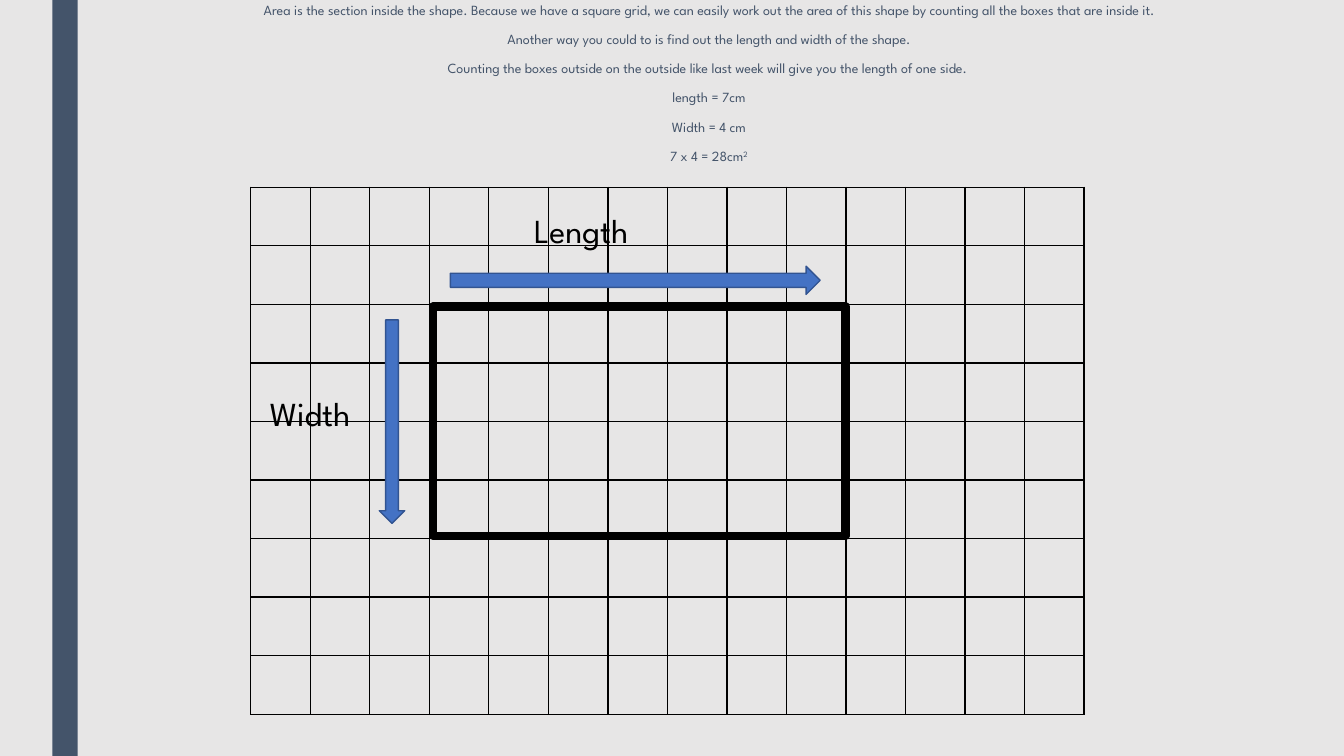
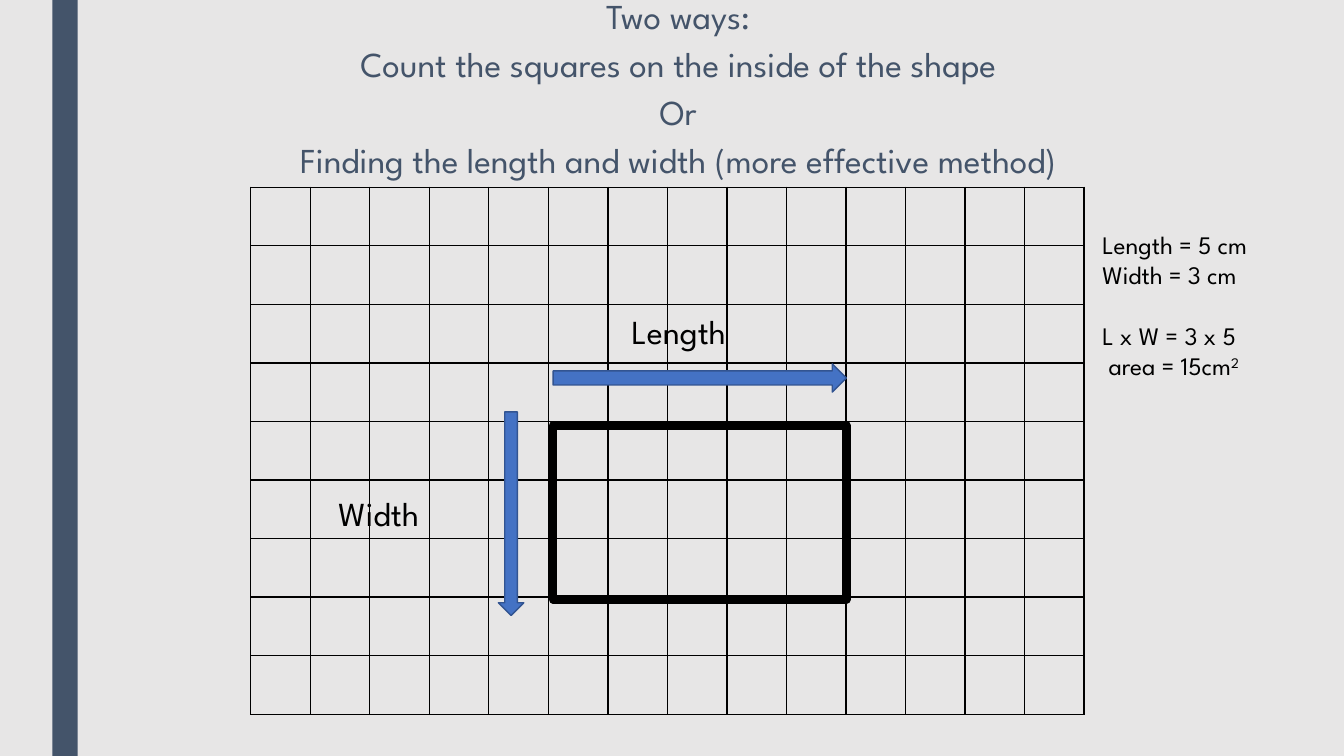
from lxml.etree import SubElement
from pptx import Presentation
from pptx.dml.color import RGBColor
from pptx.enum.shapes import MSO_SHAPE as Preset
from pptx.enum.text import MSO_AUTO_SIZE as AutoSize, MSO_ANCHOR as Anchor, PP_ALIGN as Align
from pptx.oxml.ns import qn
from pptx.util import Cm, Pt

# Shared look
FONT = "League Spartan"
PAPER, NAVY, BLACK = "E7E6E6", "44546A", "000000"
ARROW_FILL, ARROW_EDGE = "4472C4", "325491"
SLIDE_WIDTH, SLIDE_HEIGHT = 33.87, 19.05
COLUMNS, ROWS = 14, 9
GRID = (6.32, 4.72, 21, 13.28)
LABEL_SIZE = (6.63, 1.27)
ARROW_THICKNESS, DOWN_ARROW_THICKNESS, DOWN_ARROW_LENGTH = 0.71, 0.64, 5.13


def color(value):
    return RGBColor.from_string(value)


def place(*lengths):
    return [Cm(length) for length in lengths]


def write_paragraph(para, text, *, size, ink=BLACK, align=Align.LEFT,
                    spacing=None, before=0, after=0):
    """Write one paragraph; what follows a caret is superscript."""
    para.alignment = align
    para.line_spacing = spacing
    para.space_before, para.space_after = Pt(before), Pt(after)
    base, _, power = text.partition("^")
    for part in filter(None, (base, power)):
        span = para.add_run()
        span.text = part
        span.font.name, span.font.size = FONT, Pt(size)
        span.font.color.rgb = color(ink)
    if power:
        span._r.get_or_add_rPr().set("baseline", "30000")


def paragraphs(frame, count):
    return [frame.paragraphs[0]] + [frame.add_paragraph() for _ in range(count - 1)]


def add_preset(page, preset, bounds, *, fill=None, line=None, weight=1):
    shape = page.shapes.add_shape(preset, *place(*bounds))
    shape.shadow.inherit = False
    if fill:
        shape.fill.solid()
        shape.fill.fore_color.rgb = color(fill)
    else:
        shape.fill.background()
    if line:
        shape.line.color.rgb = color(line)
        shape.line.width = Pt(weight)
    else:
        shape.line.fill.background()
    return shape


def style_master(deck, page):
    """Give the master its background and its side band."""
    master = deck.slide_master
    master.background.fill.solid()
    master.background.fill.fore_color.rgb = color(PAPER)
    band = add_preset(page, Preset.RECTANGLE, (1.32, 0, 0.64, SLIDE_HEIGHT), fill=NAVY)
    band.element.xpath(".//p:cNvPr")[0].set("id", "20")
    master.shapes.element.insert(2, band.element)


def add_page(deck):
    page = deck.slides.add_slide(deck.slide_layouts[1])
    title = page.shapes.title.element
    title.getparent().remove(title)
    return page


def fill_body(page, lines, *, width, size):
    body = page.placeholders[1]
    body.left, body.top, body.width, body.height = place(4.24, 0, width, 4.72)
    frame = body.text_frame
    frame.auto_size = AutoSize.NONE
    frame.vertical_anchor = Anchor.TOP
    for para, text in zip(paragraphs(frame, len(lines)), lines):
        write_paragraph(para, text, size=size, ink=NAVY, align=Align.CENTER,
                        spacing=0.74, before=10, after=2)
        properties = para._p.get_or_add_pPr()
        properties.set("marL", "0")
        properties.set("indent", "0")
        SubElement(properties, qn("a:buNone"))


def add_text(page, bounds, lines, *, size):
    """Add a text box from pairs of text and gap above in points."""
    box = page.shapes.add_textbox(*place(*bounds))
    frame = box.text_frame
    frame.word_wrap = True
    frame.auto_size = AutoSize.SHAPE_TO_FIT_TEXT
    for para, (text, gap) in zip(paragraphs(frame, len(lines)), lines):
        write_paragraph(para, text, size=size, before=gap)


def border_cell(cell):
    properties = cell._tc.get_or_add_tcPr()
    for side in ("lnL", "lnR", "lnT", "lnB"):
        edge = SubElement(properties, qn(f"a:{side}"), w=str(Pt(1)))
        fill = SubElement(edge, qn("a:solidFill"))
        SubElement(fill, qn("a:srgbClr"), val=BLACK)


def add_grid(page):
    table = page.shapes.add_table(ROWS, COLUMNS, *place(*GRID)).table
    table.first_row = table.horz_banding = False
    for cell in table.iter_cells():
        border_cell(cell)
        cell.fill.background()


def add_measured_rectangle(page, bounds, *, length_arrow, width_arrow,
                           length_label, width_label):
    """Draw the outlined rectangle with its two arrows and labels."""
    add_preset(page, Preset.RECTANGLE, bounds, line=BLACK, weight=6)
    arrows = (
        (Preset.RIGHT_ARROW, (*length_arrow, ARROW_THICKNESS)),
        (Preset.DOWN_ARROW, (*width_arrow, DOWN_ARROW_THICKNESS, DOWN_ARROW_LENGTH)),
    )
    for preset, arrow_bounds in arrows:
        add_preset(page, preset, arrow_bounds, fill=ARROW_FILL, line=ARROW_EDGE)
    for text, corner in (("Width", width_label), ("Length", length_label)):
        add_text(page, (*corner, *LABEL_SIZE), [(text, 0)], size=24)


def build_explanation(page):
    fill_body(page, [
        "Area is the section inside the shape. Because we have a square grid, we can "
        "easily work out the area of this shape by counting all the boxes that are inside it.",
        "Another way you could to is find out the length and width of the shape.",
        "Counting the boxes outside on the outside like last week will give you "
        "the length of one side. ",
        "length = 7cm",
        "Width = 4 cm",
        "7 x 4 = 28cm^2",
    ], width=27.25, size=10)
    add_grid(page)
    add_measured_rectangle(page, (10.92, 7.72, 10.39, 5.79),
                           length_arrow=(11.35, 6.71, 9.32), width_arrow=(9.56, 8.06),
                           length_label=(13.21, 5.16), width_label=(6.55, 9.78))


def build_two_ways(page):
    fill_body(page, [
        "Two ways:",
        "Count the squares on the inside of the shape",
        "Or",
        "Finding the length and width (more effective method)",
    ], width=25.7, size=25)
    add_grid(page)
    add_measured_rectangle(page, (13.94, 10.72, 7.39, 4.39),
                           length_arrow=(13.94, 9.17, 7.39), width_arrow=(12.56, 10.38),
                           length_label=(15.67, 7.7), width_label=(8.28, 12.29))
    add_text(page, (27.53, 5.66, 5.05, 4.11), [
        ("Length = 5 cm", 0),
        ("Width = 3 cm", 0),
        ("L x W = 3 x 5", 21.7),
        (" area = 15cm^2", 0),
    ], size=18)


def main():
    deck = Presentation()
    deck.slide_width, deck.slide_height = place(SLIDE_WIDTH, SLIDE_HEIGHT)
    explanation, two_ways = add_page(deck), add_page(deck)
    style_master(deck, explanation)
    build_explanation(explanation)
    build_two_ways(two_ways)
    deck.save("out.pptx")


if __name__ == "__main__":
    main()
